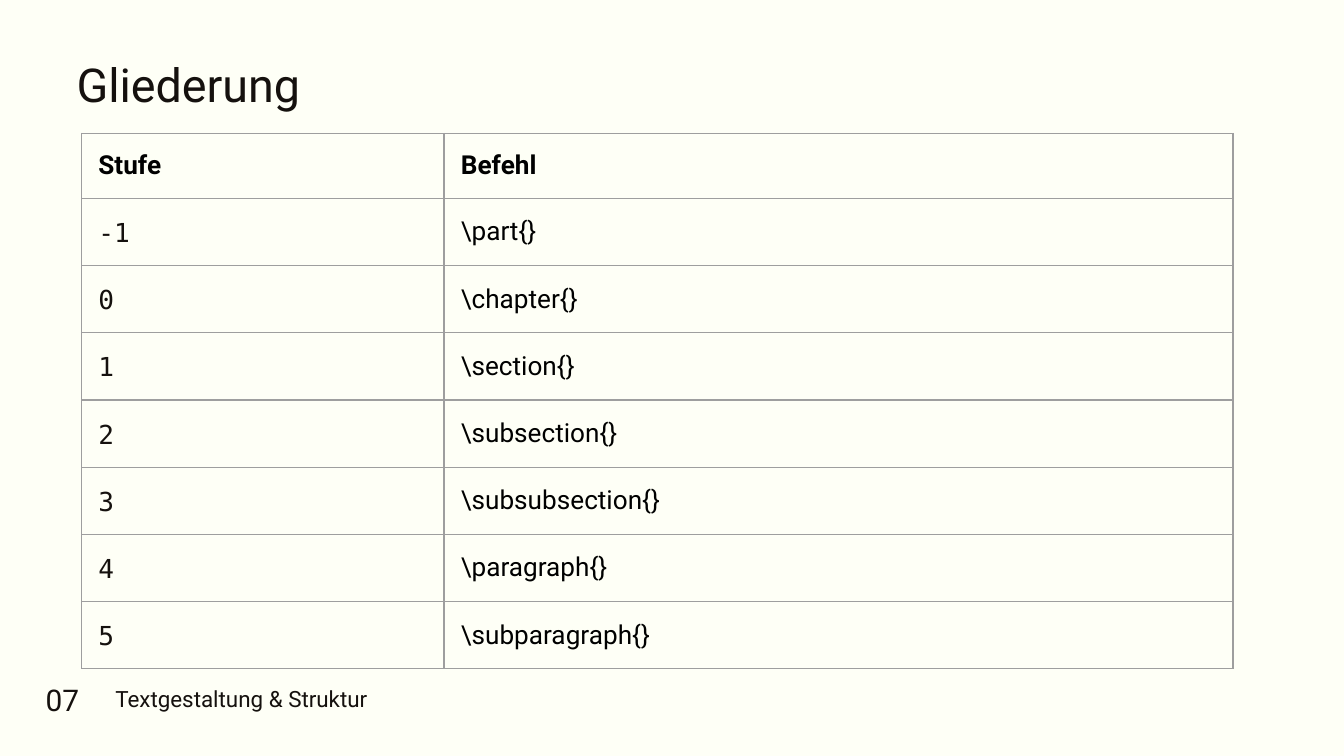
from lxml import etree
from pptx import Presentation
from pptx.dml.color import RGBColor
from pptx.enum.text import MSO_ANCHOR, PP_ALIGN
from pptx.oxml.ns import qn
from pptx.util import Pt

LEFT = PP_ALIGN.LEFT
CENTER = PP_ALIGN.CENTER
TOP = MSO_ANCHOR.TOP
MIDDLE = MSO_ANCHOR.MIDDLE

SANS = "Roboto"
MONO = "DejaVu Sans Mono"
BACKGROUND = "FEFFF6"
INK = "15110E"
BLACK = "000000"
GRID = "9E9E9E"

HEADINGS = ("Stufe", "Befehl")
COMMANDS = ["part", "chapter", "section", "subsection", "subsubsection",
            "paragraph", "subparagraph"]
FIRST_LEVEL = -1
COLUMN_WIDTHS = (194.2, 422.6)
ROW_HEIGHT = 29.5


def color(hex_value):
    return RGBColor.from_string(hex_value)


def format_runs(paragraph, size, hex_value, font_name=SANS, bold=False):
    for run in paragraph.runs:
        run.font.size = Pt(size)
        run.font.name = font_name
        run.font.bold = bold
        run.font.color.rgb = color(hex_value)


def add_text(slide, text, left, top, width, height, size, align=LEFT):
    shape = slide.shapes.add_textbox(Pt(left), Pt(top), Pt(width), Pt(height))
    text_frame = shape.text_frame
    text_frame.word_wrap = True
    text_frame.vertical_anchor = TOP
    text_frame.margin_left = text_frame.margin_right = Pt(7.2)
    text_frame.margin_top = text_frame.margin_bottom = Pt(7.2)
    text_frame.text = text
    paragraph = text_frame.paragraphs[0]
    paragraph.alignment = align
    format_runs(paragraph, size, INK)


def set_borders(cell, hex_value, width):
    properties = cell._tc.get_or_add_tcPr()
    for side in ("a:lnL", "a:lnR", "a:lnT", "a:lnB"):
        line = etree.SubElement(properties, qn(side), w=str(Pt(width)))
        fill = etree.SubElement(line, qn("a:solidFill"))
        etree.SubElement(fill, qn("a:srgbClr"), val=hex_value)


def fill_cell(cell, text, hex_value=BLACK, font_name=SANS, bold=False, spacing=None):
    set_borders(cell, GRID, 0.75)
    cell.fill.background()
    cell.vertical_anchor = MIDDLE
    cell.margin_left = cell.margin_right = Pt(9)
    cell.margin_top = cell.margin_bottom = Pt(9)
    cell.text = text
    paragraph = cell.text_frame.paragraphs[0]
    if spacing:
        paragraph.line_spacing = Pt(spacing)
    format_runs(paragraph, 14, hex_value, font_name, bold)


def add_command_table(slide, left, top):
    row_count = len(COMMANDS) + 1
    frame = slide.shapes.add_table(
        row_count, len(HEADINGS), Pt(left), Pt(top),
        Pt(sum(COLUMN_WIDTHS)), Pt(ROW_HEIGHT * row_count))
    table = frame.table
    table.first_row = False
    table.horz_banding = False
    for column, width in zip(table.columns, COLUMN_WIDTHS):
        column.width = Pt(width)
    for row in table.rows:
        row.height = Pt(ROW_HEIGHT)

    # Header row
    for index, heading in enumerate(HEADINGS):
        fill_cell(table.cell(0, index), heading, bold=True)

    # One row per sectioning level
    for index, command in enumerate(COMMANDS):
        level = str(FIRST_LEVEL + index)
        fill_cell(table.cell(index + 1, 0), level, INK, MONO, spacing=18)
        fill_cell(table.cell(index + 1, 1), f"\\{command}{{}}")


def main():
    presentation = Presentation()
    presentation.slide_width = Pt(720)
    presentation.slide_height = Pt(405)
    slide = presentation.slides.add_slide(presentation.slide_layouts[6])
    slide.background.fill.solid()
    slide.background.fill.fore_color.rgb = color(BACKGROUND)

    # Title
    add_text(slide, "Gliederung", 34, 22.5, 304, 75, 25)

    # Sectioning commands
    add_command_table(slide, 43.75, 71.5)

    # Page number and chapter name
    add_text(slide, "07", 12.2, 358, 42.5, 34, 16, CENTER)
    add_text(slide, "Textgestaltung & Struktur", 54.7, 360, 205, 34, 12)

    presentation.save("out.pptx")


if __name__ == "__main__":
    main()
